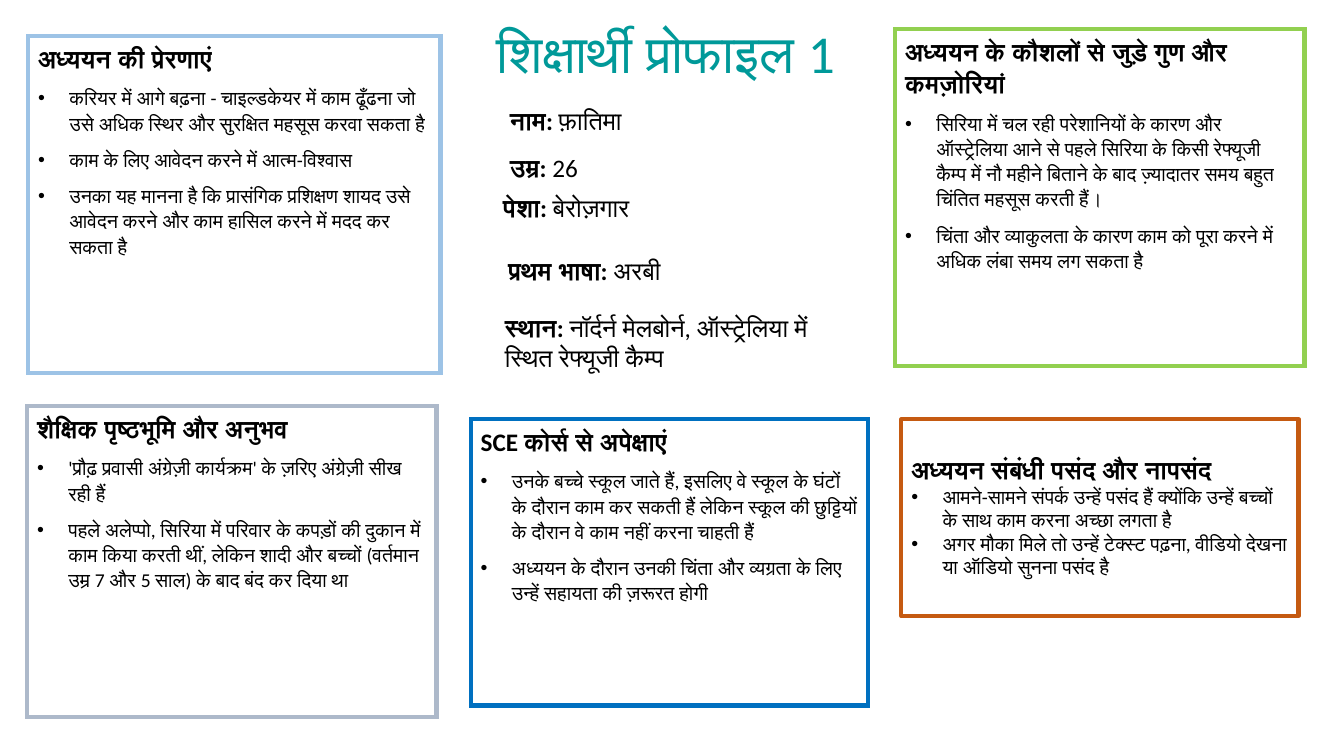
import pptx
import pptx.util
import pptx.dml.color
import pptx.enum.shapes
import pptx.enum.text
import pptx.oxml.ns
import lxml.etree

Inches = pptx.util.Inches
Pt = pptx.util.Pt

COLORS = {
    "text": "000000", "title": "009999", "white": "FFFFFF",
    "motivation": "9DC3E6", "skills": "92D050", "education": "ADB9CA",
    "expectations": "0070C0", "preferences": "C55A11",
}


def rgb(name):
    return pptx.dml.color.RGBColor.from_string(COLORS[name])


def write(paragraph, text, size=18, bold=False, color="text", spacing=None,
          before=0, after=0, bullet=False):
    run = paragraph.add_run()
    run.text = text
    run.font.name = "Calibri"
    run.font.size = Pt(size)
    run.font.bold = bold
    run.font.color.rgb = rgb(color)
    paragraph.alignment = pptx.enum.text.PP_ALIGN.LEFT
    paragraph.space_before = Pt(before)
    paragraph.space_after = Pt(after)
    if spacing:
        paragraph.line_spacing = spacing
    if bullet:
        properties = paragraph._p.get_or_add_pPr()
        properties.set("marL", str(Inches(0.31)))
        properties.set("indent", str(-Inches(0.31)))
        for tag, key, value in (("a:buFont", "typeface", "Arial"), ("a:buChar", "char", "•")):
            element = lxml.etree.SubElement(properties, pptx.oxml.ns.qn(tag))
            element.set(key, value)


presentation = pptx.Presentation()
presentation.slide_width = Inches(13.33)
presentation.slide_height = Inches(7.5)
slide = presentation.slides.add_slide(presentation.slide_layouts[6])

cards = [
    ("expectations", (4.67, 4.16, 3.94, 2.84), "SCE कोर्स से अपेक्षाएं", [
        "उनके बच्चे स्कूल जाते हैं, इसलिए वे स्कूल के घंटों के दौरान काम कर सकती हैं "
        "लेकिन स्कूल की छुट्टियों के दौरान वे काम नहीं करना चाहती हैं",
        "अध्ययन के दौरान उनकी चिंता और व्यग्रता के लिए उन्हें सहायता की ज़रूरत होगी",
    ]),
    ("motivation", (0.28, 0.36, 4.09, 3.34), "अध्ययन की प्रेरणाएं", [
        "करियर में आगे बढ़ना - चाइल्डकेयर में काम ढूँढना जो उसे अधिक स्थिर और "
        "सुरक्षित महसूस करवा सकता है",
        "काम के लिए आवेदन करने में आत्म-विश्वास",
        "उनका यह मानना है कि प्रासंगिक प्रशिक्षण शायद उसे आवेदन करने और काम "
        "हासिल करने में मदद कर सकता है",
    ]),
    ("skills", (8.88, 0.29, 4.06, 3.34), "अध्ययन के कौशलों से जुड़े गुण और कमज़ोरियां", [
        "सिरिया में चल रही परेशानियों के कारण और ऑस्ट्रेलिया आने से पहले सिरिया के "
        "किसी रेफ्यूजी कैम्प में नौ महीने बिताने के बाद ज़्यादातर समय बहुत चिंतित महसूस करती हैं।",
        "चिंता और व्याकुलता के कारण काम को पूरा करने में अधिक लंबा समय लग सकता है",
    ]),
    ("education", (0.27, 4.03, 4.06, 3.08), "शैक्षिक पृष्ठभूमि और अनुभव", [
        "'प्रौढ़ प्रवासी अंग्रेज़ी कार्यक्रम' के ज़रिए अंग्रेज़ी सीख रही हैं",
        "पहले अलेप्पो, सिरिया में परिवार के कपड़ों की दुकान में काम किया करती थीं, "
        "लेकिन शादी और बच्चों (वर्तमान उम्र 7 और 5 साल) के बाद बंद कर दिया था",
    ]),
    ("preferences", (8.94, 4.16, 3.94, 1.95), "अध्ययन संबंधी पसंद और नापसंद", [
        "आमने-सामने संपर्क उन्हें पसंद हैं क्योंकि उन्हें बच्चों के साथ काम करना अच्छा लगता है",
        "अगर मौका मिले तो उन्हें टेक्स्ट पढ़ना, वीडियो देखना या ऑडियो सुनना पसंद है",
    ]),
]

for name, place, heading, points in cards:
    compact = name == "preferences"
    card = slide.shapes.add_shape(
        pptx.enum.shapes.MSO_SHAPE.RECTANGLE, *map(Inches, place))
    card.shadow.inherit = False
    card.line.color.rgb = rgb(name)
    card.line.width = Pt(3)
    if compact:
        card.fill.background()
    else:
        card.fill.solid()
        card.fill.fore_color.rgb = rgb("white")
        miter = lxml.etree.SubElement(card.line._get_or_add_ln(), pptx.oxml.ns.qn("a:miter"))
        miter.set("lim", "800000")
    frame = card.text_frame
    frame.word_wrap = True
    frame.vertical_anchor = pptx.enum.text.MSO_ANCHOR.TOP
    after = 0 if compact else 8
    write(frame.paragraphs[0], heading, bold=True, after=after,
          spacing=2.0 if compact else 1.07)
    for point in points:
        write(frame.add_paragraph(), point, size=14, after=after,
              spacing=None if compact else 1.07, bullet=True)

title = slide.shapes.add_textbox(Inches(4.83), Inches(0.22), Inches(3.79), Inches(0.68))
title.text_frame.word_wrap = False
title.text_frame.auto_size = pptx.enum.text.MSO_AUTO_SIZE.SHAPE_TO_FIT_TEXT
write(title.text_frame.paragraphs[0], "शिक्षार्थी प्रोफाइल 1", size=38, color="title",
      spacing=0.9, before=10)

facts = [
    ((4.96, 1.0, 3.76, 0.4), "नाम:", " फ़ातिमा"),
    ((4.96, 1.46, 3.17, 0.4), "उम्र:", " 26"),
    ((4.89, 1.86, 3.45, 0.4), "पेशा:", " बेरोज़गार"),
    ((4.94, 2.48, 3.45, 0.4), "प्रथम भाषा:", " अरबी"),
    ((4.91, 3.05, 3.45, 0.71), "स्थान:", " नॉर्दर्न मेलबोर्न, ऑस्ट्रेलिया में स्थित रेफ्यूजी कैम्प"),
]

for place, label, value in facts:
    fact = slide.shapes.add_textbox(*map(Inches, place))
    fact.text_frame.word_wrap = True
    fact.text_frame.auto_size = pptx.enum.text.MSO_AUTO_SIZE.SHAPE_TO_FIT_TEXT
    write(fact.text_frame.paragraphs[0], label, bold=True)
    write(fact.text_frame.paragraphs[0], value)

presentation.save("out.pptx")
